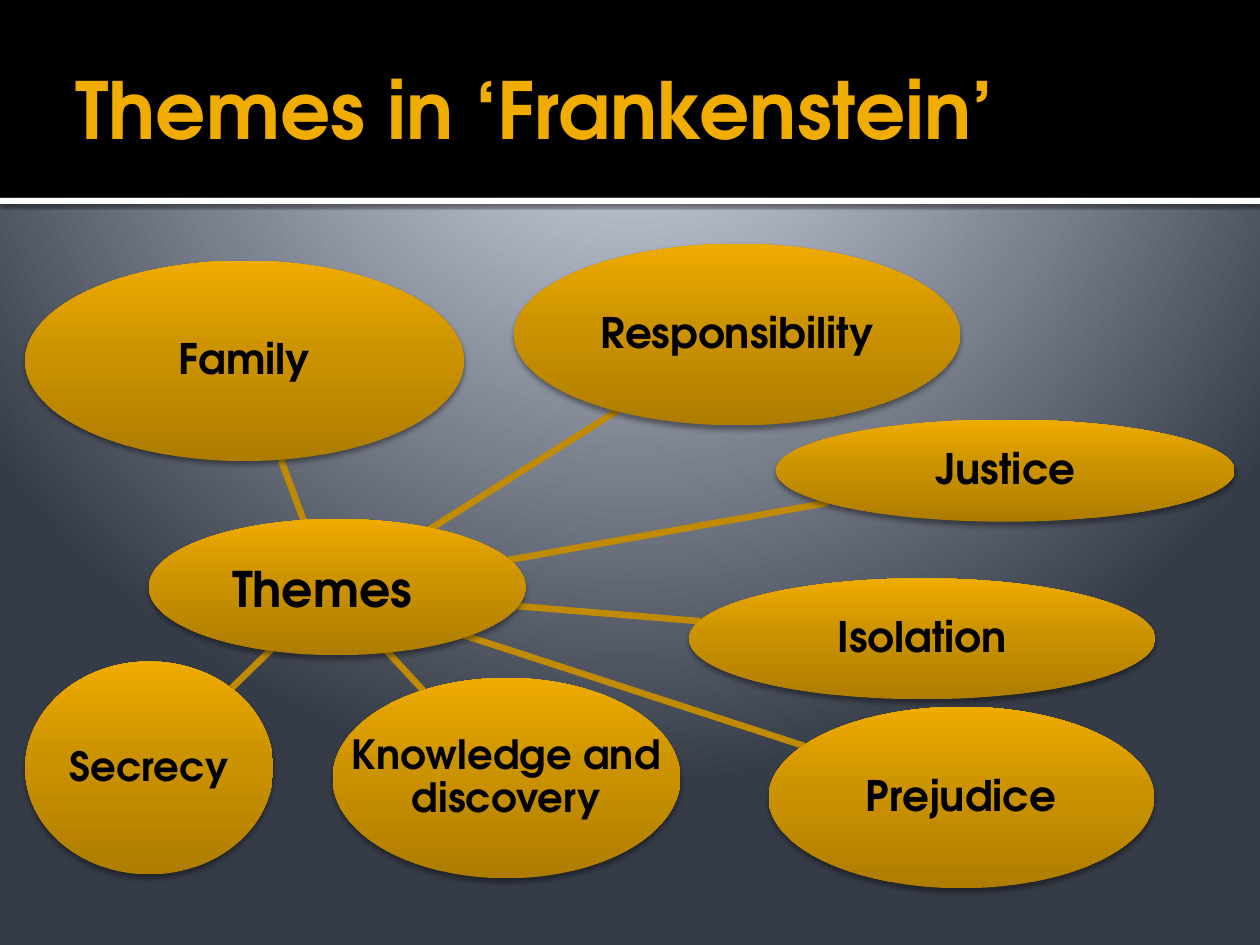
from pptx import Presentation, oxml
from pptx import util as u
from pptx.dml import color as c
from pptx.enum import shapes, text
from pptx.oxml import ns

FONT = "TeX Gyre Adventor"
SHADOW = (
    '<a:outerShdw {ns} blurRad="{blur}" dist="{distance}" dir="5400000" algn="ctr" rotWithShape="0">'
    '<a:srgbClr val="000000"><a:alpha val="{alpha}000"/></a:srgbClr></a:outerShdw>'
)
GRADIENT = '<a:gradFill {ns} rotWithShape="1"><a:gsLst>{stops}</a:gsLst>{direction}</a:gradFill>'
STOP = '<a:gs pos="{}000"><a:srgbClr val="{}"/></a:gs>'
SKY = [(0, "C1C5D3"), (12, "C1C5D3"), (20, "BFC4D2"), (100, "353B47")]
GOLD = [(0, "AE7D00"), (55, "CC9300"), (100, "EEAB00")]


def color(value):
    return c.RGBColor.from_string(value)


def drawing(template, **values):
    return oxml.parse_xml(template.format(ns=ns.nsdecls("a"), **values))


presentation = Presentation()
presentation.slide_width = u.Pt(720)
presentation.slide_height = u.Pt(540)
slide = presentation.slides.add_slide(presentation.slide_layouts[5])

slide.background.fill.solid()
background = slide.element.cSld.find(ns.qn("p:bg")).find(ns.qn("p:bgPr"))
background.replace(background[0], drawing(
    GRADIENT,
    stops="".join(STOP.format(*stop) for stop in SKY),
    direction='<a:path path="circle"><a:fillToRect l="10000" t="-25000" r="10000" b="125000"/></a:path>',
))

rule, band = [
    slide.shapes.add_shape(shapes.MSO_SHAPE.RECTANGLE, 0, u.Pt(top), u.Pt(720), u.Pt(height))
    for top, height in [(113, 3.6), (0, 113)]
]
for bar, fill in [(rule, "FFFFFF"), (band, "000000")]:
    bar.fill.solid()
    bar.fill.fore_color.rgb = color(fill)
    bar.line.fill.background()
    bar.shadow.inherit = False
rule.element.spPr.find(ns.qn("a:effectLst")).append(
    drawing(SHADOW, blur=u.Pt(2.5), distance=u.Pt(0.8), alpha=60))

title = slide.shapes.title
title.left, title.top, title.width, title.height = u.Pt(36), u.Pt(12), u.Pt(648), u.Pt(99)
title.text_frame.text = "Themes in ‘Frankenstein’"
title.text_frame.auto_size = text.MSO_AUTO_SIZE.NONE
title.text_frame.vertical_anchor = text.MSO_ANCHOR.MIDDLE
title.text_frame.margin_left = u.Pt(7.2)
title.text_frame.margin_right = u.Pt(3.6)
title.text_frame.paragraphs[0].alignment = text.PP_ALIGN.LEFT
title_font = title.text_frame.paragraphs[0].runs[0].font
title_font.name, title_font.size, title_font.bold = FONT, u.Pt(45), True
title_font.color.rgb = color("F0AD00")
slide.shapes._spTree.append(title.element)

spokes = [
    (162, 364.3, 132.5, 393.1),
    (214.6, 365, 241.9, 394.6),
    (216, 347, 459.4, 426.2),
    (216, 339.8, 400.3, 355),
    (216, 333.4, 473, 287.3),
    (216, 321.1, 352.8, 234.7),
    (178.6, 311, 160.6, 262.8),
]
for spoke in spokes:
    connector = slide.shapes.add_connector(
        shapes.MSO_CONNECTOR.STRAIGHT, *[u.Pt(value) for value in spoke])
    connector.line.color.rgb = color("C08B00")
    connector.line.width = u.Pt(3.78)
    connector.element.spPr.append(drawing("<a:effectLst {ns}/>"))

bubbles = [
    ("", 0, 85, 296.6, 215.3, 77.8),
    ("Family", 24, 14.4, 149, 250.6, 114.5),
    ("Responsibility", 24, 293.8, 139.4, 254.9, 103.7),
    ("Justice", 24, 443.5, 239.8, 262.1, 58.3),
    ("Isolation", 24, 393.8, 330.5, 266.4, 69.1),
    ("Prejudice", 24, 439.2, 403.9, 220.3, 103.7),
    ("Knowledge and\vdiscovery", 23, 190.1, 387.4, 198.7, 114.5),
    ("Secrecy", 23, 14.4, 378, 141.8, 121.7),
]
labels = []
for words, size, *box in bubbles:
    bubble = slide.shapes.add_shape(shapes.MSO_SHAPE.OVAL, *[u.Pt(value) for value in box])
    bubble.element.spPr.append(drawing(
        GRADIENT,
        stops="".join(STOP.format(*stop) for stop in GOLD),
        direction='<a:lin ang="16200000" scaled="0"/>',
    ))
    bubble.line.fill.background()
    bubble.shadow.inherit = False
    bubble.element.spPr.find(ns.qn("a:effectLst")).append(
        drawing(SHADOW, blur=u.Pt(3.1), distance=u.Pt(2), alpha=38))
    if words:
        labels.append((bubble, words, size, 0.9))

hub_label = slide.shapes.add_textbox(u.Pt(110.2), u.Pt(315.4), u.Pt(147.6), u.Pt(41))
labels.append((hub_label, "Themes", 28, 1))

for shape, words, size, spacing in labels:
    frame = shape.text_frame
    frame.text = words
    frame.word_wrap = False
    frame.vertical_anchor = text.MSO_ANCHOR.MIDDLE
    paragraph = frame.paragraphs[0]
    paragraph.alignment = text.PP_ALIGN.CENTER
    paragraph.line_spacing = spacing
    for run in paragraph.runs:
        run.font.name, run.font.size, run.font.bold = FONT, u.Pt(size), True
        run.font.color.rgb = color("000000")

presentation.save("out.pptx")
